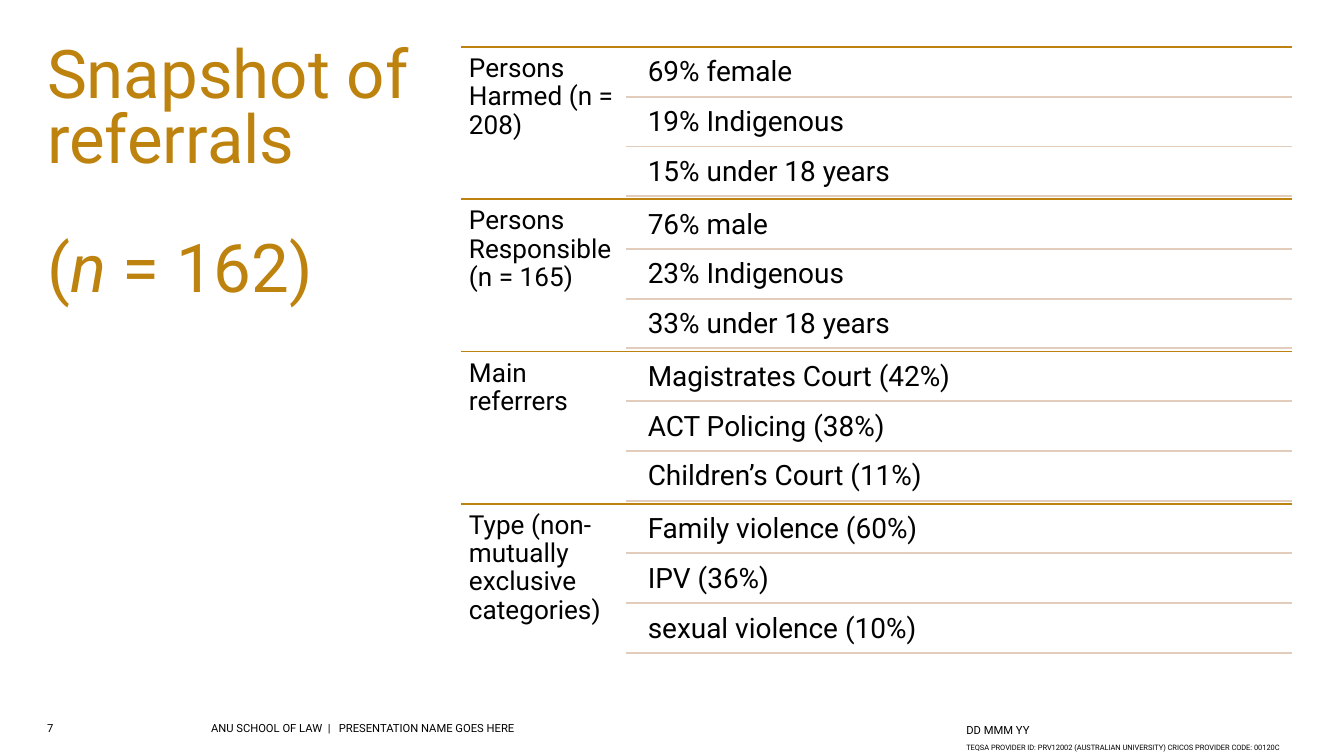
from lxml import etree
from pptx import Presentation
from pptx.dml.color import RGBColor
from pptx.enum.shapes import MSO_CONNECTOR
from pptx.enum.text import MSO_ANCHOR, MSO_AUTO_SIZE, PP_ALIGN
from pptx.oxml.ns import qn
from pptx.util import Inches, Pt

TOP, MIDDLE = MSO_ANCHOR.TOP, MSO_ANCHOR.MIDDLE
NO_FIT, LEFT = MSO_AUTO_SIZE.NONE, PP_ALIGN.LEFT
STRAIGHT = MSO_CONNECTOR.STRAIGHT
FONT, GOLD, SAND, BLACK = "Roboto", "BE830E", "E2CDBD", "000000"

# Content
TITLE_START, TITLE_SYMBOL, TITLE_END = "Snapshot of referrals \v\v(", "n", " = 162)"
GROUPS = [
    ("Persons Harmed (n = 208)",
     ["69% female", "19% Indigenous", "15% under 18 years"]),
    ("Persons Responsible (n = 165)",
     ["76% male", "23% Indigenous", "33% under 18 years"]),
    ("Main referrers",
     ["Magistrates Court (42%)", "ACT Policing (38%)", "Children’s Court (11%)"]),
    ("Type (non-mutually exclusive categories)",
     ["Family violence (60%)", "IPV (36%)", "sexual violence (10%)"]),
]
# Text, left, top, width, height, size, anchor
FOOTERS = [
    ("TEQSA PROVIDER ID: PRV12002 (AUSTRALIAN UNIVERSITY) CRICOS PROVIDER CODE: 00120C",
     7.19, 5.53, 3.61, 0.18, 4, TOP),
    ("ANU SCHOOL OF LAW  |   PRESENTATION NAME GOES HERE", 1.57, 5.37, 5.91, 0.12, 6, TOP),
    ("7", 0.35, 5.37, 0.39, 0.12, 6, TOP),
    ("DD MMM YY", 7.19, 5.37, 0.79, 0.12, 6, MIDDLE),
]

# Layout, in inches
TABLE_LEFT, TABLE_RIGHT, TABLE_TOP, TABLE_BOTTOM = 3.43, 9.61, 0.35, 4.88
DETAIL_LEFT, ITEM_LEFT, LABEL_WIDTH = 4.66, 4.76, 1.24
ITEM_HEIGHT, ITEM_PITCH, INSET = 0.35, 0.37, 0.06
GROUP_HEIGHT = (TABLE_BOTTOM - TABLE_TOP) / len(GROUPS)
TITLE_SIZE = 36


def rgb(value):
    return RGBColor.from_string(value)


def style(font, size, color):
    font.name, font.size = FONT, Pt(size)
    font.color.rgb = rgb(color)


def set_frame(frame, inset, anchor=TOP):
    frame.word_wrap, frame.auto_size = True, NO_FIT
    frame.vertical_anchor = anchor
    frame.margin_left = frame.margin_right = Inches(inset)
    frame.margin_top = frame.margin_bottom = Inches(inset)


def add_text(slide, text, left, top, width, height, size,
             anchor=TOP, inset=0, spacing=1.0):
    box = slide.shapes.add_textbox(Inches(left), Inches(top), Inches(width), Inches(height))
    set_frame(box.text_frame, inset, anchor)
    box.text_frame.text = text
    paragraph = box.text_frame.paragraphs[0]
    paragraph.line_spacing = spacing
    style(paragraph.runs[0].font, size, BLACK)


def add_rule(slide, left, y, color):
    rule = slide.shapes.add_connector(
        STRAIGHT, Inches(left), Inches(y), Inches(TABLE_RIGHT), Inches(y))
    rule.line.color.rgb = rgb(color)
    rule.line.width = Pt(1)
    etree.SubElement(rule._element.spPr, qn("a:effectLst"))


def add_title(slide):
    title = slide.shapes.title
    title.left, title.top = Inches(0.35), Inches(0.35)
    title.width, title.height = Inches(3.15), Inches(3.44)
    set_frame(title.text_frame, 0)
    paragraph = title.text_frame.paragraphs[0]
    paragraph.text = TITLE_START
    paragraph.alignment, paragraph.line_spacing = LEFT, 0.8
    symbol = paragraph.add_run()
    symbol.text = TITLE_SYMBOL
    paragraph.add_run().text = TITLE_END
    for run in paragraph.runs:
        style(run.font, TITLE_SIZE, GOLD)
    symbol.font.italic = True
    # Line breaks take the size of the title text
    for line_break in paragraph._p.findall(qn("a:br")):
        etree.SubElement(line_break, qn("a:rPr"), sz=str(TITLE_SIZE * 100))


def add_group(slide, top, label, items):
    add_rule(slide, TABLE_LEFT, top, GOLD)
    add_text(slide, label, TABLE_LEFT, top, LABEL_WIDTH, GROUP_HEIGHT, 14,
             inset=INSET, spacing=0.9)
    for row, item in enumerate(items):
        item_top = top + 0.02 + row * ITEM_PITCH
        add_text(slide, item, ITEM_LEFT, item_top, TABLE_RIGHT - ITEM_LEFT,
                 ITEM_HEIGHT, 15, inset=INSET, spacing=0.9)
        add_rule(slide, DETAIL_LEFT, item_top + ITEM_HEIGHT, SAND)


def main():
    deck = Presentation()
    # Widescreen, 16 to 9
    deck.slide_width = Inches(10)
    deck.slide_height = deck.slide_width * 9 // 16
    slide = deck.slides.add_slide(deck.slide_layouts[5])
    add_title(slide)
    # Footer line
    for footer in FOOTERS:
        add_text(slide, *footer)
    # Referral figures
    for index, (label, items) in enumerate(GROUPS):
        add_group(slide, TABLE_TOP + index * GROUP_HEIGHT, label, items)
    deck.save("out.pptx")


if __name__ == "__main__":
    main()
